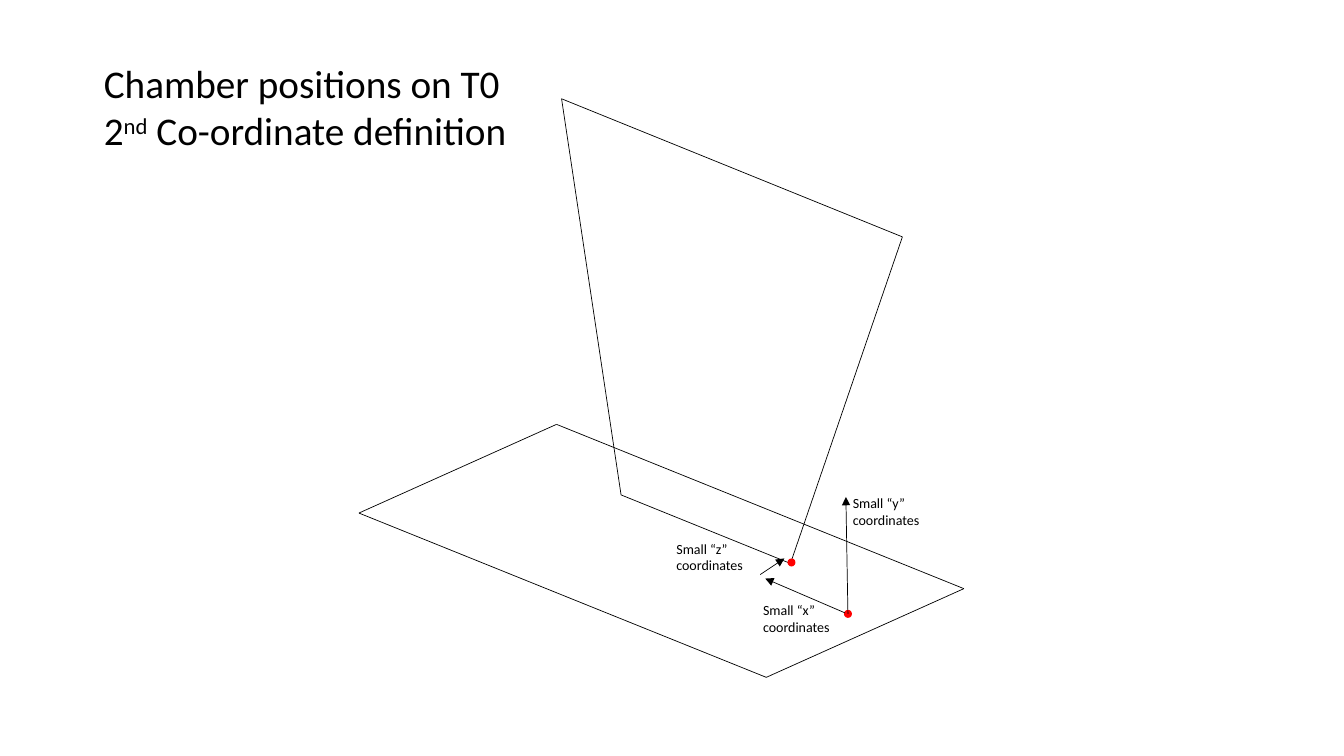
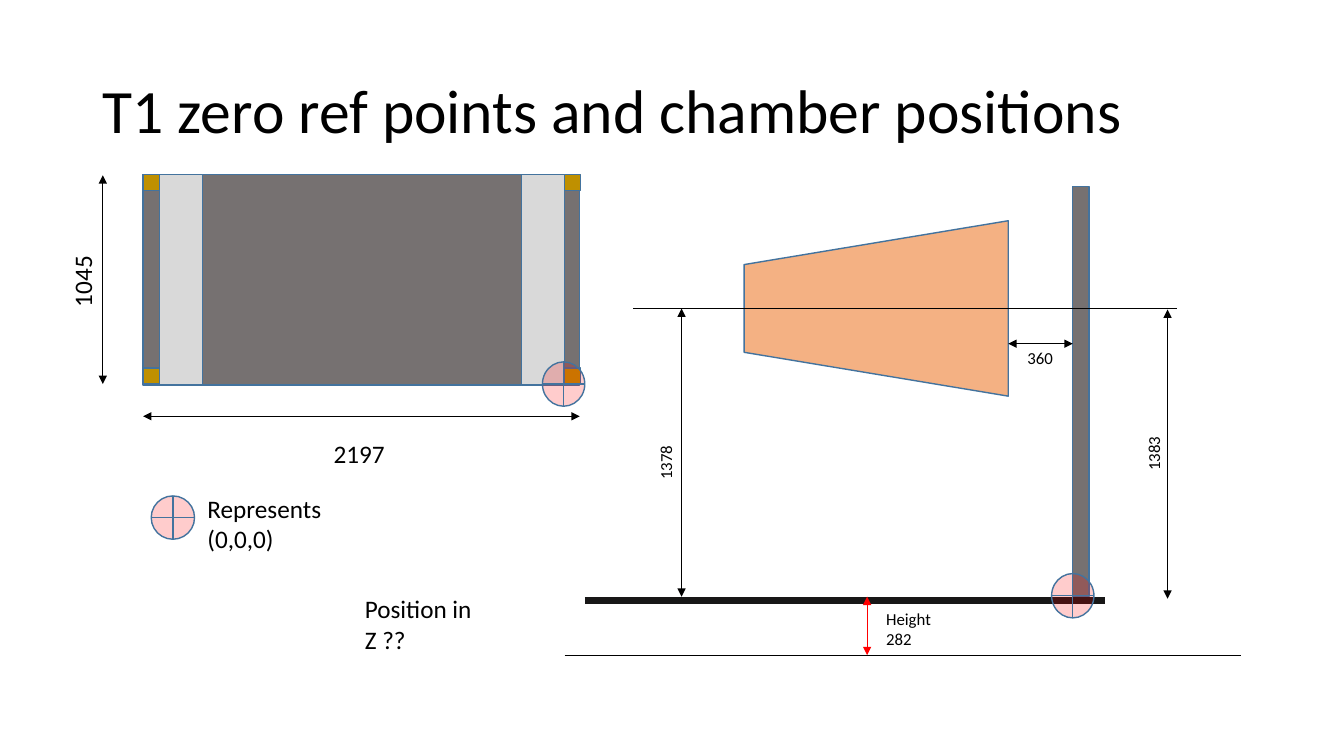
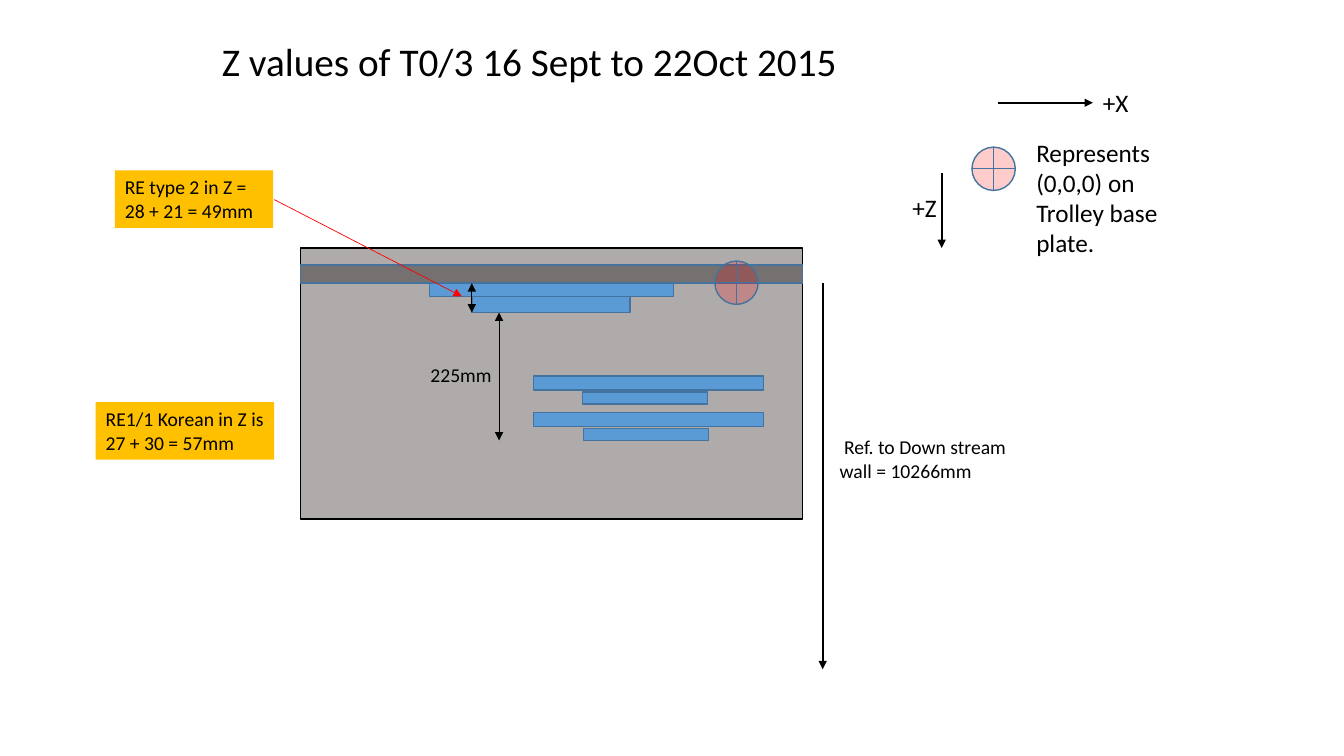
from lxml import etree
from pptx import Presentation
from pptx import util as u
from pptx.dml.color import RGBColor
from pptx.enum import shapes, text
from pptx.oxml.ns import qn

PX = 9144  # EMU in one px, 100 px to the inch
FONT = "Calibri"
BLACK = RGBColor(0x00, 0x00, 0x00)
RED = RGBColor(0xFF, 0x00, 0x00)
EDGE = RGBColor(0x43, 0x73, 0x9E)
STEEL = RGBColor(0x76, 0x71, 0x71)
PALE = RGBColor(0xD9, 0xD9, 0xD9)
PLATE = RGBColor(0xAF, 0xAB, 0xAB)
BRASS = RGBColor(0xBF, 0x90, 0x00)
PEACH = RGBColor(0xF4, 0xB1, 0x83)
BEAM = RGBColor(0x18, 0x17, 0x17)
BLUE = RGBColor(0x5B, 0x9B, 0xD5)
GOLD = RGBColor(0xFF, 0xC0, 0x00)

KIND = shapes.MSO_SHAPE
TOP = text.MSO_ANCHOR.TOP
MID = text.MSO_ANCHOR.MIDDLE


def px(*nums):
    return [u.Emu(n * PX) for n in nums]


def write(frame, words, size=18, anchor=TOP, space=1.0):
    """Fill a text frame; a line break starts a paragraph, ^...^ is raised."""
    frame.word_wrap = True
    frame.auto_size = text.MSO_AUTO_SIZE.NONE
    frame.vertical_anchor = anchor
    for i, line in enumerate(words.split("\n")):
        para = frame.add_paragraph() if i else frame.paragraphs[0]
        para.alignment = text.PP_ALIGN.LEFT
        para.line_spacing = space
        for j, part in enumerate(line.split("^")):
            run = para.add_run()
            run.text = part
            run.font.name = FONT
            run.font.size = u.Pt(size)
            run.font.color.rgb = BLACK
            if j % 2:
                run._r.get_or_add_rPr().set("baseline", "30000")


class Deck:
    """Holds the style and the current slide."""

    def __init__(self):
        self.prs = Presentation()
        self.prs.slide_width, self.prs.slide_height = u.Inches(13.33), u.Inches(7.5)

    def start(self, words, at, **style):
        """Add a slide with its title."""
        self.slide = self.prs.slides.add_slide(self.prs.slide_layouts[5])
        head = self.slide.shapes.title
        head.left, head.top, head.width, head.height = px(*at)
        write(head.text_frame, words, **style)

    def label(self, words, x, y, w, h, turn=0, **style):
        box = self.slide.shapes.add_textbox(*px(x, y, w, h))
        box.rotation = turn
        write(box.text_frame, words, **style)

    def shape(self, x, y, w, h, fill, line=EDGE, kind=KIND.RECTANGLE):
        item = self.slide.shapes.add_shape(kind, *px(x, y, w, h))
        item.shadow.inherit = False
        item.fill.solid()
        item.fill.fore_color.rgb = fill
        if line is None:
            item.line.fill.background()
        else:
            item.line.color.rgb = line
            item.line.width = u.Pt(1)
        return item

    def note(self, words, *at):
        write(self.shape(*at, GOLD, None).text_frame, words, size=14)

    def dot(self, x, y):
        self.shape(x, y, 8, 8, RED, None, KIND.OVAL)

    def zero(self, x, y, w=43, h=43):
        """Draw the see-through mark of a zero point."""
        mark = self.shape(x, y, w, h, RED, kind=KIND.FLOWCHART_OR)
        tint = mark._element.spPr.find(".//" + qn("a:srgbClr"))
        etree.SubElement(tint, qn("a:alpha")).set("val", "20000")

    def line(self, x1, y1, x2, y2, color=BLACK, width=0.5, ends=()):
        item = self.slide.shapes.add_connector(
            shapes.MSO_CONNECTOR.STRAIGHT, *px(x1, y1, x2, y2))
        item.line.color.rgb = color
        item.line.width = u.Pt(width)
        props = item._element.spPr
        for end in ends:
            tip = etree.SubElement(props.get_or_add_ln(), qn(f"a:{end}End"))
            tip.set("type", "triangle")
        etree.SubElement(props, qn("a:effectLst"))

    def arrow(self, *at, **style):
        self.line(*at, ends=["tail"], **style)

    def span(self, *at, **style):
        """Draw a dimension line with a head at both ends."""
        self.line(*at, ends=["head", "tail"], **style)

    def ring(self, *dots):
        """Join points into a closed outline."""
        for a, b in zip(dots, dots[1:] + dots[:1]):
            self.line(*a, *b)


def coords(deck):
    deck.start("Chamber positions on T0\n2^nd^ Co-ordinate definition",
               (93, 54, 450, 104), size=28)
    deck.ring((557, 98), (895, 235), (784, 559), (616, 491))
    deck.ring((356, 509), (760, 672), (956, 584), (552, 421))
    deck.dot(837, 605)
    deck.dot(781, 554)
    for axis, x, y, w in (("x", 747, 592, 90), ("z", 661, 531, 89), ("y", 836, 486, 100)):
        deck.label(f"Small “{axis}” coordinates", x, y, w, 44, size=10)
    deck.arrow(838, 608, 759, 574)
    deck.arrow(754, 570, 778, 554)
    deck.arrow(841, 609, 839, 493)


def zeros(deck):
    deck.start("T1 zero ref points and chamber positions",
               (92, 40, 1150, 145), size=44, anchor=MID, space=0.9)
    # Front view of the trolley
    deck.shape(142, 173, 433, 209, STEEL)
    for x in (142, 560):
        for y in (173, 365):
            deck.shape(x, y, 16, 16, BRASS)
    for x in (517, 158):
        deck.shape(x, 173, 43, 209, PALE)
    deck.zero(538, 359, 42, 44)
    deck.span(142, 413, 575, 413)
    deck.span(102, 381, 102, 174)
    deck.label("1045", 42, 255, 79, 40, turn=270)
    deck.label("2197", 321, 430, 74, 40)

    # Side view with the chamber
    deck.shape(1064, 185, 16, 407, STEEL)
    deck.line(580, 596, 1096, 596, color=BEAM, width=5)
    deck.shape(782, 175, 174, 262, PEACH, kind=KIND.TRAPEZOID).rotation = 270
    deck.line(628, 306, 1167, 306)
    deck.span(1158, 307, 1158, 594)
    deck.span(676, 306, 676, 592)
    deck.span(1000, 341, 1064, 341)
    deck.label("1383", 1107, 425, 74, 30, turn=270, size=12)
    deck.label("1378", 623, 434, 74, 30, turn=270, size=12)
    deck.label("360", 1009, 340, 49, 30, size=12)
    deck.zero(1043, 569, 42, 44)
    deck.line(560, 650, 1231, 650)
    deck.span(860, 592, 860, 650, color=RED)
    deck.label("Height 282", 869, 599, 74, 50, size=12)

    # Key
    deck.zero(150, 492)
    deck.label("Represents (0,0,0)", 196, 484, 140, 72)
    deck.label("Position in Z ??", 352, 584, 137, 71)


def depths(deck):
    deck.start("Z values of T0/3 16 Sept to 22Oct 2015", (210, 32, 660, 57), size=28)
    # Base plate and chambers
    deck.shape(298, 246, 498, 269, PLATE, BLACK)
    deck.shape(298, 263, 498, 18, STEEL)
    deck.shape(426, 281, 242, 13, BLUE)
    deck.shape(468, 294, 157, 16, BLUE)
    for x, y in ((578, 373), (579, 409)):
        deck.shape(529, y, 228, 14, BLUE)
        deck.shape(x, y + 16, 124, 12, BLUE)
    deck.zero(709, 259)

    # Key and axes
    deck.zero(964, 146)
    deck.label("Represents (0,0,0) on Trolley base plate.", 1018, 131, 140, 131)
    deck.arrow(934, 172, 934, 246, width=1.25)
    deck.arrow(990, 102, 1084, 102, width=1.25)
    deck.label("+X", 1084, 82, 59, 40)
    deck.label("+Z", 895, 186, 59, 40)

    # Distances
    deck.arrow(816, 281, 816, 664, width=1.25)
    deck.label(" Ref. to Down stream wall = 10266mm", 823, 427, 200, 57, size=14)
    deck.span(468, 281, 468, 310)
    deck.span(495, 310, 495, 437)
    deck.label("225mm", 417, 355, 91, 34, size=14)
    deck.note("RE type 2 in Z = 28 + 21 = 49mm", 114, 169, 157, 57)
    deck.arrow(272, 198, 458, 294, color=RED)
    deck.note("RE1/1 Korean in Z is 27 + 30 = 57mm", 95, 399, 177, 57)


def main():
    deck = Deck()
    for build in (coords, zeros, depths):
        build(deck)
    deck.prs.save("out.pptx")


if __name__ == "__main__":
    main()
